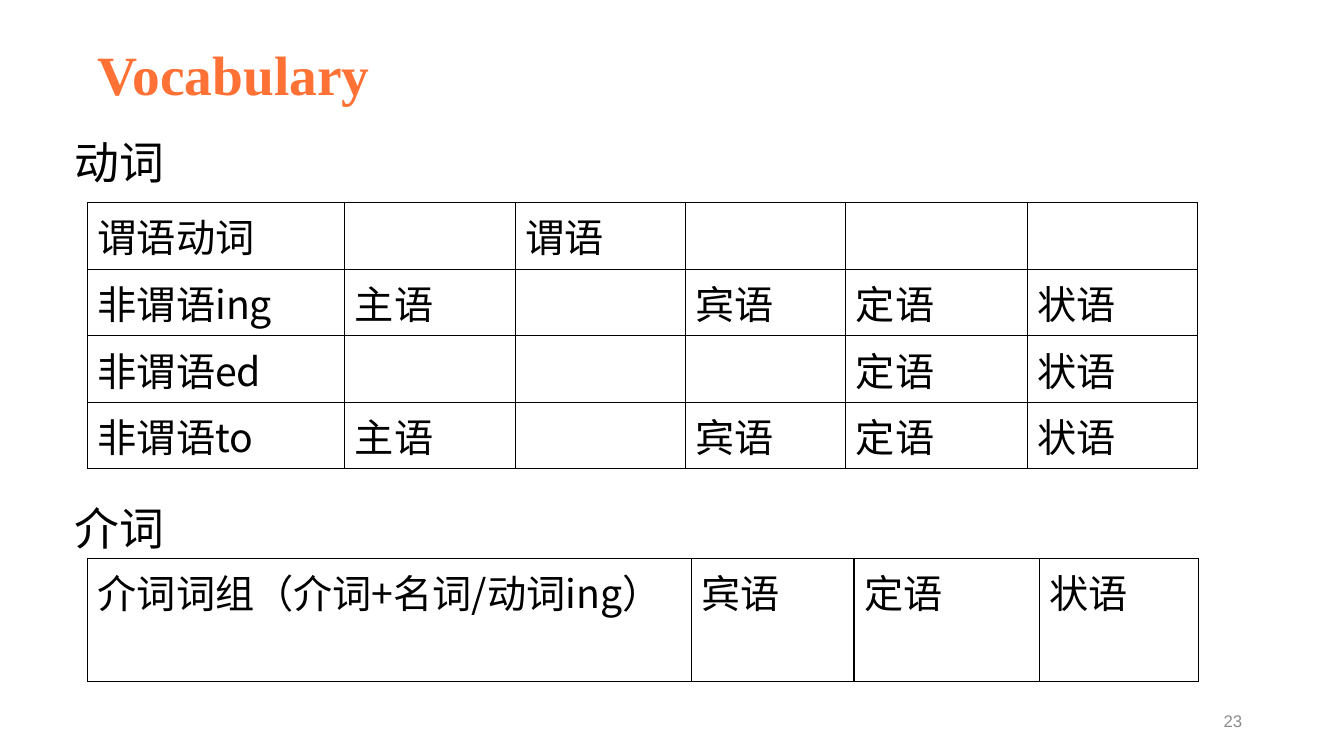
"""Build the Vocabulary slide with its two grammar tables."""
from dataclasses import dataclass

from lxml import etree
from pptx import Presentation
from pptx.dml.color import RGBColor
from pptx.enum.text import MSO_ANCHOR, PP_ALIGN
from pptx.oxml.ns import qn
from pptx.util import Inches, Pt

LEFT, RIGHT = PP_ALIGN.LEFT, PP_ALIGN.RIGHT
TOP, MIDDLE = MSO_ANCHOR.TOP, MSO_ANCHOR.MIDDLE
ORANGE = RGBColor(0xFF, 0x71, 0x35)
BLACK = RGBColor(0x00, 0x00, 0x00)
GREY = RGBColor(0x8C, 0x8C, 0x8C)
CJK = "Noto Sans CJK SC"


@dataclass
class Label:
    text: str
    box: tuple[float, float, float, float]
    size: float
    font: str = CJK
    color: RGBColor = BLACK
    bold: bool = False
    align: int = LEFT
    anchor: int = TOP
    spacing: float = 1.0


@dataclass
class Grid:
    left: float
    top: float
    cols: list[float]
    row_height: float
    rows: list[list[str]]


LABELS = [
    Label("Vocabulary", (0.87, 0.46, 8, 0.62), 39.6, "Times New Roman", ORANGE,
          bold=True, anchor=MIDDLE, spacing=0.9),
    Label("动词", (0.64, 1.29, 11.54, 0.74), 32),
    Label("介词", (0.64, 4.92, 11.54, 0.74), 32),
    Label("23", (9.42, 6.95, 3, 0.4), 12, "Arial", GREY, align=RIGHT, anchor=MIDDLE),
]
GRIDS = [
    Grid(0.87, 2.01, [2.55, 1.69, 1.69, 1.59, 1.8, 1.69], 0.66, [
        ["谓语动词", "", "谓语", "", "", ""],
        ["非谓语ing", "主语", "", "宾语", "定语", "状语"],
        ["非谓语ed", "", "", "", "定语", "状语"],
        ["非谓语to", "主语", "", "宾语", "定语", "状语"],
    ]),
    Grid(0.87, 5.54, [5.99, 1.61, 1.84, 1.58], 1.22, [
        ["介词词组（介词+名词/动词ing）", "宾语", "定语", "状语"],
    ]),
]


def write(tf, text: str, *, size: float, font: str = CJK, color: RGBColor = BLACK,
          bold: bool = False, align: int = LEFT, spacing: float = 1.0) -> None:
    p = tf.paragraphs[0]
    p.alignment, p.line_spacing = align, spacing
    r = p.add_run()
    r.text = text
    r.font.size, r.font.name, r.font.bold = Pt(size), font, bold
    r.font.color.rgb = color
    etree.SubElement(r.font._element, qn("a:ea"), typeface=font)


def add_label(slide, label: Label) -> None:
    sp = slide.shapes.add_textbox(*map(Inches, label.box))
    tf = sp.text_frame
    tf.word_wrap, tf.vertical_anchor = True, label.anchor
    write(tf, label.text, size=label.size, font=label.font, color=label.color,
          bold=label.bold, align=label.align, spacing=label.spacing)


def add_borders(cell) -> None:
    tc_pr = cell._tc.get_or_add_tcPr()
    for side in ("lnL", "lnR", "lnT", "lnB"):
        ln = etree.SubElement(tc_pr, qn(f"a:{side}"), w=str(Pt(1)))
        fill = etree.SubElement(ln, qn("a:solidFill"))
        etree.SubElement(fill, qn("a:srgbClr"), val=str(BLACK))


def add_grid(slide, grid: Grid) -> None:
    n = len(grid.rows)
    frame = slide.shapes.add_table(
        n, len(grid.cols), Inches(grid.left), Inches(grid.top),
        Inches(sum(grid.cols)), Inches(n * grid.row_height))
    table = frame.table
    table.first_row = table.horz_banding = False
    for col, width in zip(table.columns, grid.cols):
        col.width = Inches(width)
    for row, texts in zip(table.rows, grid.rows):
        row.height = Inches(grid.row_height)
        for cell, text in zip(row.cells, texts):
            add_borders(cell)
            cell.fill.background()
            if text:
                write(cell.text_frame, text, size=28)


def main() -> None:
    prs = Presentation()
    prs.slide_width, prs.slide_height = Inches(13.33), Inches(7.5)
    slide = prs.slides.add_slide(prs.slide_layouts[6])
    for label in LABELS:
        add_label(slide, label)
    for grid in GRIDS:
        add_grid(slide, grid)
    prs.save("out.pptx")


if __name__ == "__main__":
    main()
